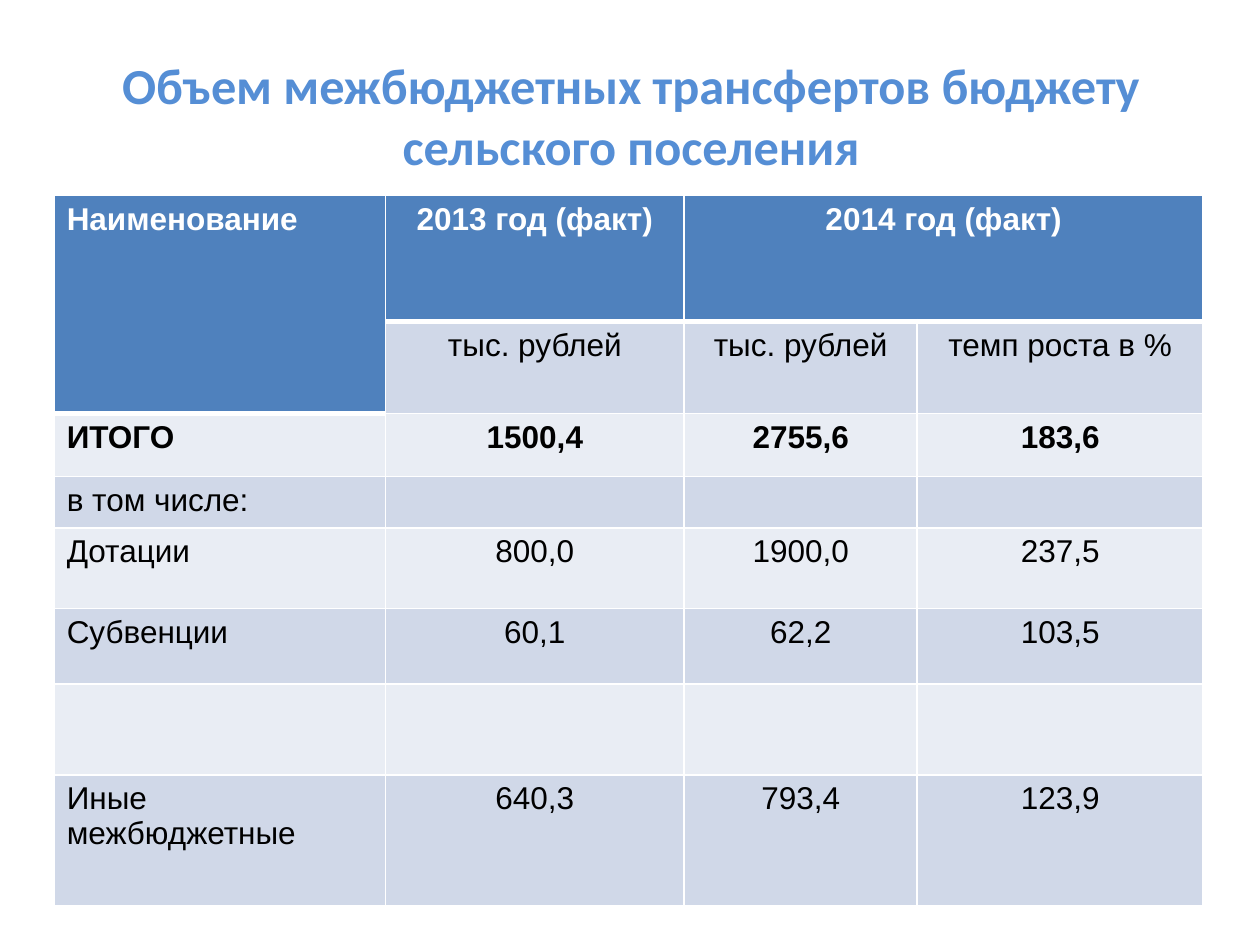
"""Build the slide on inter-budget transfers to the rural settlement."""
import dataclasses
import typing

import lxml.etree
import pptx
import pptx.dml.color
import pptx.enum.text
import pptx.oxml.ns
import pptx.util

Inches = pptx.util.Inches
Pt = pptx.util.Pt
ALIGN = pptx.enum.text.PP_ALIGN

COLORS = {
    "title": "558ED5",
    "header": "4F81BD",
    "dark_band": "D0D8E8",
    "light_band": "E9EDF4",
    "white": "FFFFFF",
    "black": "000000",
}
COLUMN_WIDTHS = [2.63, 2.37, 1.85, 2.27]
HEAVY_TOPS = {(1, 1), (1, 2), (1, 3), (2, 0)}


@dataclasses.dataclass
class BudgetRow:
    """One table row with its height in inches."""

    height: float
    texts: typing.Sequence[str]
    bold: bool = False


ROWS = [
    BudgetRow(1, ["Наименование", "2013 год (факт)", "2014 год (факт)", ""], True),
    BudgetRow(0.73, ["", "тыс. рублей", "тыс. рублей", "темп роста в %"]),
    BudgetRow(0.5, ["ИТОГО", "1500,4", "2755,6", "183,6"], True),
    BudgetRow(0.41, ["в том числе:", "", "", ""]),
    BudgetRow(0.64, ["Дотации", "800,0", "1900,0", "237,5"]),
    BudgetRow(0.6, ["Субвенции", "60,1", "62,2", "103,5"]),
    BudgetRow(0.72, ["", "", "", ""]),
    BudgetRow(1.04, ["Иные межбюджетные", "640,3", "793,4", "123,9"]),
]


def rgb(name: str) -> pptx.dml.color.RGBColor:
    """Return a palette colour."""
    return pptx.dml.color.RGBColor.from_string(COLORS[name])


def add_run(paragraph, text: str, font: str, size: float, color: str, bold: bool) -> None:
    """Append a formatted run."""
    run = paragraph.add_run()
    run.text = text
    run.font.name = font
    run.font.size = Pt(size)
    run.font.bold = bold
    run.font.color.rgb = rgb(color)


def add_title(slide, text: str) -> None:
    """Place and fill the title."""
    title = slide.shapes.title
    title.left, title.top = Inches(0.51), Inches(0.36)
    title.width, title.height = Inches(9), Inches(1.1)
    frame = title.text_frame
    frame.word_wrap = True
    frame.auto_size = pptx.enum.text.MSO_AUTO_SIZE.NONE
    frame.vertical_anchor = pptx.enum.text.MSO_ANCHOR.MIDDLE
    paragraph = frame.paragraphs[0]
    paragraph.alignment = ALIGN.CENTER
    add_run(paragraph, text, "Calibri", 28.8, "title", True)


def set_borders(cell, top: float, bottom: float) -> None:
    """Draw white cell borders with the given top and bottom widths in points."""
    qn = pptx.oxml.ns.qn
    properties = cell._tc.get_or_add_tcPr()
    edges = {"a:lnL": 1, "a:lnR": 1, "a:lnT": top, "a:lnB": bottom}
    for position, (tag, width) in enumerate(edges.items()):
        line = lxml.etree.Element(qn(tag), w=str(Pt(width)))
        fill = lxml.etree.SubElement(line, qn("a:solidFill"))
        lxml.etree.SubElement(fill, qn("a:srgbClr"), val=COLORS["white"])
        properties.insert(position, line)


def fill_cell(cell, row: int, column: int, content: BudgetRow) -> None:
    """Style one cell and write its text."""
    is_header = row == 0 or (row, column) == (1, 0)
    band = "header" if is_header else "dark_band" if row % 2 else "light_band"
    cell.fill.solid()
    cell.fill.fore_color.rgb = rgb(band)
    top = 3 if (row, column) in HEAVY_TOPS else 1
    bottom = 3 if row == 0 or (row + 1, column) in HEAVY_TOPS else 1
    set_borders(cell, top, bottom)
    text = content.texts[column]
    if text:
        paragraph = cell.text_frame.paragraphs[0]
        paragraph.alignment = ALIGN.CENTER if column else ALIGN.LEFT
        color = "white" if is_header else "black"
        add_run(paragraph, text, "Arial", 18, color, content.bold)


def add_transfers_table(slide) -> None:
    """Add the table of transfers."""
    frame = slide.shapes.add_table(
        len(ROWS), len(COLUMN_WIDTHS), Inches(0.43), Inches(1.55),
        Inches(sum(COLUMN_WIDTHS)), Inches(sum(row.height for row in ROWS)),
    )
    table = frame.table
    for column, width in zip(table.columns, COLUMN_WIDTHS):
        column.width = Inches(width)
    table.cell(0, 0).merge(table.cell(1, 0))
    table.cell(0, 2).merge(table.cell(0, 3))
    for row, content in enumerate(ROWS):
        table.rows[row].height = Inches(content.height)
        for column in range(len(COLUMN_WIDTHS)):
            fill_cell(table.cell(row, column), row, column, content)


def main() -> None:
    """Create and save the presentation."""
    presentation = pptx.Presentation()
    presentation.slide_width = Inches(10)
    presentation.slide_height = Inches(7.5)
    slide = presentation.slides.add_slide(presentation.slide_layouts[5])
    add_title(slide, "Объем межбюджетных трансфертов бюджету сельского поселения")
    add_transfers_table(slide)
    presentation.save("out.pptx")


if __name__ == "__main__":
    main()
